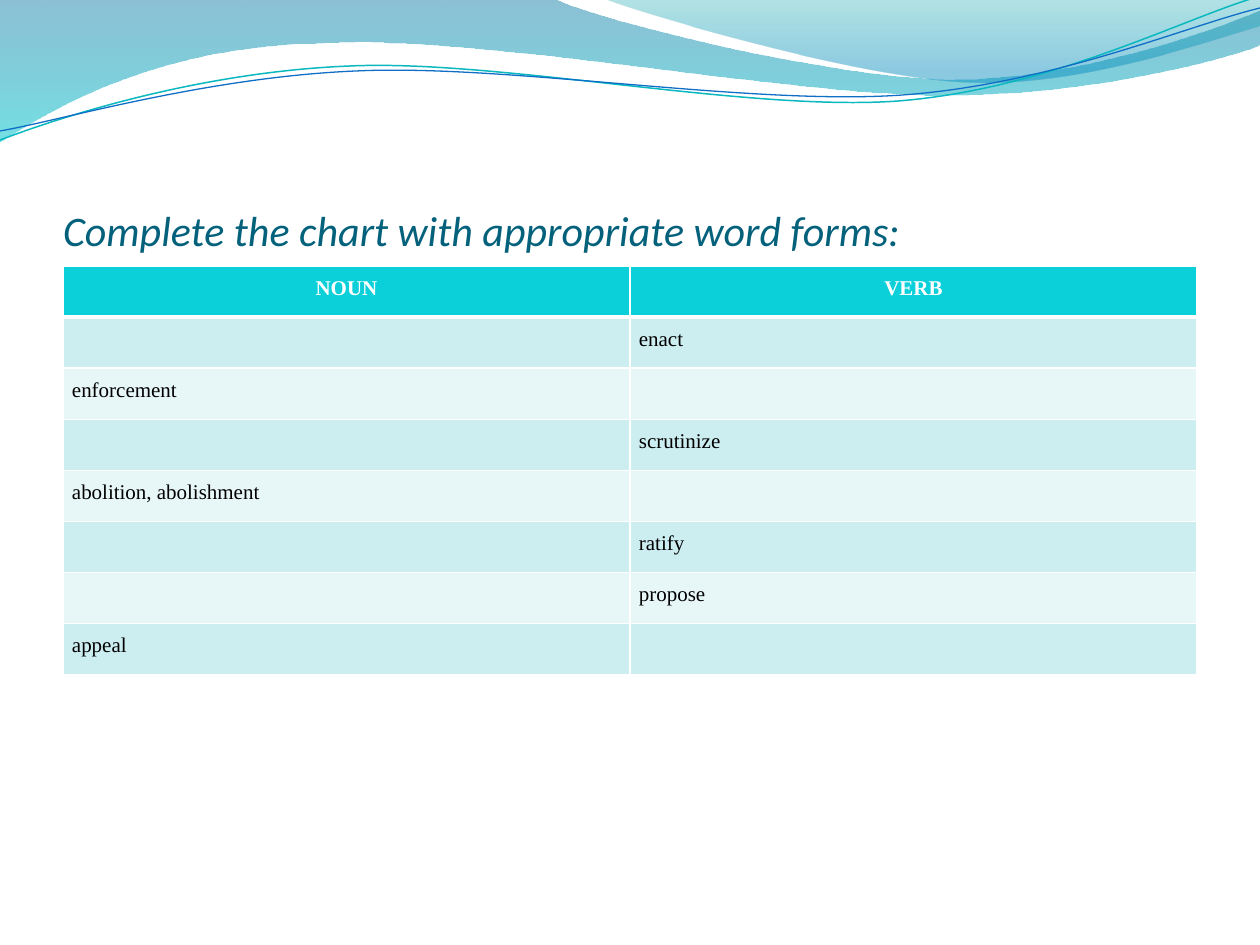
from lxml.etree import SubElement
from pptx import Presentation
from pptx.dml.color import RGBColor
from pptx.enum.text import MSO_ANCHOR, MSO_AUTO_SIZE, PP_ALIGN
from pptx.oxml.ns import qn
from pptx.util import Pt

PX = 914400 // 126
WHITE = RGBColor(255, 255, 255)
BLACK = RGBColor(0, 0, 0)
INK = RGBColor(0x04, 0x61, 0x7B)
HEAD = RGBColor(0x0B, 0xD0, 0xD9)
BANDS = [RGBColor(0xCC, 0xEE, 0xF1), RGBColor(0xE7, 0xF7, 0xF8)]
TEAL = RGBColor(0x0A, 0xB8, 0xBF)
BLUE = RGBColor(0x0F, 0x6F, 0xC6)

# Each stop: place, colour, opacity in percent
WAVE_STOPS = [(0, RGBColor(0x00, 0x74, 0xA1), 45), (1, RGBColor(0x00, 0xC6, 0xCF), 55)]
CREST_STOPS = [(0, RGBColor(0x00, 0xA1, 0xA9), 30), (0.8, RGBColor(0x00, 0x8B, 0xBF), 45)]

# Each part after the start: one point for a line, three for a curve
WAVE = [[(0, 0)], [(554, -1)],
        [(600, 21), (837, 79), (955, 79)], [(1075, 79), (1207, 33), (1260, 11)],
        [(1261, 45)], [(1239, 55), (1096, 96), (940, 95)],
        [(784, 95), (481, 35), (324, 43)], [(163, 45), (58, 105), (-1, 142)]]
CREST = [[(604, -1)], [(641, 14), (859, 78), (969, 82)],
         [(1079, 87), (1211, 40), (1260, 26)], [(1260, 0)]]
LINES = [
    (TEAL, 0.85, [[(0, 140)], [(60, 117), (199, 72), (349, 66)],
                  [(498, 59), (747, 112), (898, 101)], [(1050, 89), (1182, 19), (1257, -3)]]),
    (BLUE, 0.75, [[(0, 131)], [(59, 121), (207, 77), (357, 71)],
                  [(508, 64), (752, 106), (903, 95)], [(1053, 84), (1186, 26), (1260, 8)]]),
]
ROWS = [("NOUN", "VERB"), ("", "enact"), ("enforcement", ""), ("", "scrutinize"),
        ("abolition, abolishment", ""), ("", "ratify"), ("", "propose"), ("appeal", "")]


def curve(shape, parts):
    """Join each three straight steps of a curved part into one curve."""
    steps = shape.element.iter(qn("a:lnTo"))
    nodes = iter(list(steps))
    for part in parts:
        first, *rest = [next(nodes) for _ in part]
        if rest:
            first.tag = qn("a:cubicBezTo")
            for node in rest:
                first.append(node[0])
                node.getparent().remove(node)


def draw(slide, box, outline, close):
    """Draw an outline relative to the box."""
    left, top = box[:2]
    dots = [((left + x) * PX, (top + y) * PX) for part in outline for x, y in part]
    pen = slide.shapes.build_freeform(*dots[0], scale=1.0)
    pen.add_line_segments(dots[1:], close=close)
    shape = pen.convert_to_shape()
    curve(shape, outline[1:])
    shape.shadow.inherit = False
    return shape


def shade(shape, stops):
    """Fill a shape from top to bottom with clear colours."""
    shape.line.fill.background()
    shape.fill.gradient()
    shape.fill.gradient_angle = 270
    for stop, (place, color, _) in zip(shape.fill.gradient_stops, stops):
        stop.position = place
        stop.color.rgb = color
    tints = shape.element.iter(qn("a:srgbClr"))
    for tint, (_, _, alpha) in zip(tints, stops):
        SubElement(tint, qn("a:alpha"), val=str(alpha * 1000))


def add_waves(slide, box):
    """Draw the waves and the two thin lines."""
    for outline, stops in ((WAVE, WAVE_STOPS), (CREST, CREST_STOPS)):
        shade(draw(slide, box, outline, True), stops)
    for color, width, outline in LINES:
        line = draw(slide, box, outline, False)
        line.fill.background()
        line.line.color.rgb = color
        line.line.width = Pt(width)


def style(part, font, size, color):
    """Format all runs of a paragraph and return them."""
    for run in part.runs:
        run.font.name = font
        run.font.size = Pt(size)
        run.font.color.rgb = color
    return part.runs


def add_title(slide, box):
    """Place and format the title."""
    title = slide.shapes.title
    title.left, title.top, title.width, title.height = (n * PX for n in box)
    frame = title.text_frame
    frame.text = "Complete the chart with appropriate word forms:"
    frame.auto_size = MSO_AUTO_SIZE.NONE
    frame.word_wrap = True
    frame.vertical_anchor = MSO_ANCHOR.BOTTOM
    frame.margin_left = frame.margin_right = frame.margin_bottom = 0
    part = frame.paragraphs[0]
    part.alignment = PP_ALIGN.LEFT
    for run in style(part, "Calibri", 24, INK):
        run.font.italic = True


def edge(cell, row):
    """Give a cell white borders, thick under the head."""
    wide = {0: "B", 1: "T"}.get(row)
    for side in "LRTB":
        width = Pt(3 if side == wide else 1)
        line = SubElement(cell._tc.get_or_add_tcPr(), qn("a:ln" + side), w=str(width))
        SubElement(SubElement(line, qn("a:solidFill")), qn("a:srgbClr"), val=str(WHITE))


def add_words(slide, box):
    """Add the table of word forms."""
    rows, cols = len(ROWS), len(ROWS[0])
    table = slide.shapes.add_table(rows, cols, *(n * PX for n in box)).table
    for row, words in enumerate(ROWS):
        for col, word in enumerate(words):
            cell = table.cell(row, col)
            edge(cell, row)
            cell.fill.solid()
            cell.fill.fore_color.rgb = BANDS[(row - 1) % 2] if row else HEAD
            if not word:
                continue
            cell.margin_left = cell.margin_right = 9 * PX
            cell.margin_top = cell.margin_bottom = 9 * PX
            cell.text_frame.text = word
            part = cell.text_frame.paragraphs[0]
            part.line_spacing = 1.07
            part.alignment = PP_ALIGN.LEFT if row else PP_ALIGN.CENTER
            for run in style(part, "Times New Roman", 12, BLACK if row else WHITE):
                run.font.bold = row == 0


def main():
    """Build and save the slide."""
    deck = Presentation()
    deck.slide_width, deck.slide_height = 1260 * PX, 945 * PX
    slide = deck.slides.add_slide(deck.slide_layouts[5])
    add_waves(slide, (0, 0, 1260, 142))
    add_title(slide, (63, 97, 1134, 158))
    add_words(slide, (63, 266, 1134, 409))
    deck.save("out.pptx")


if __name__ == "__main__":
    main()
